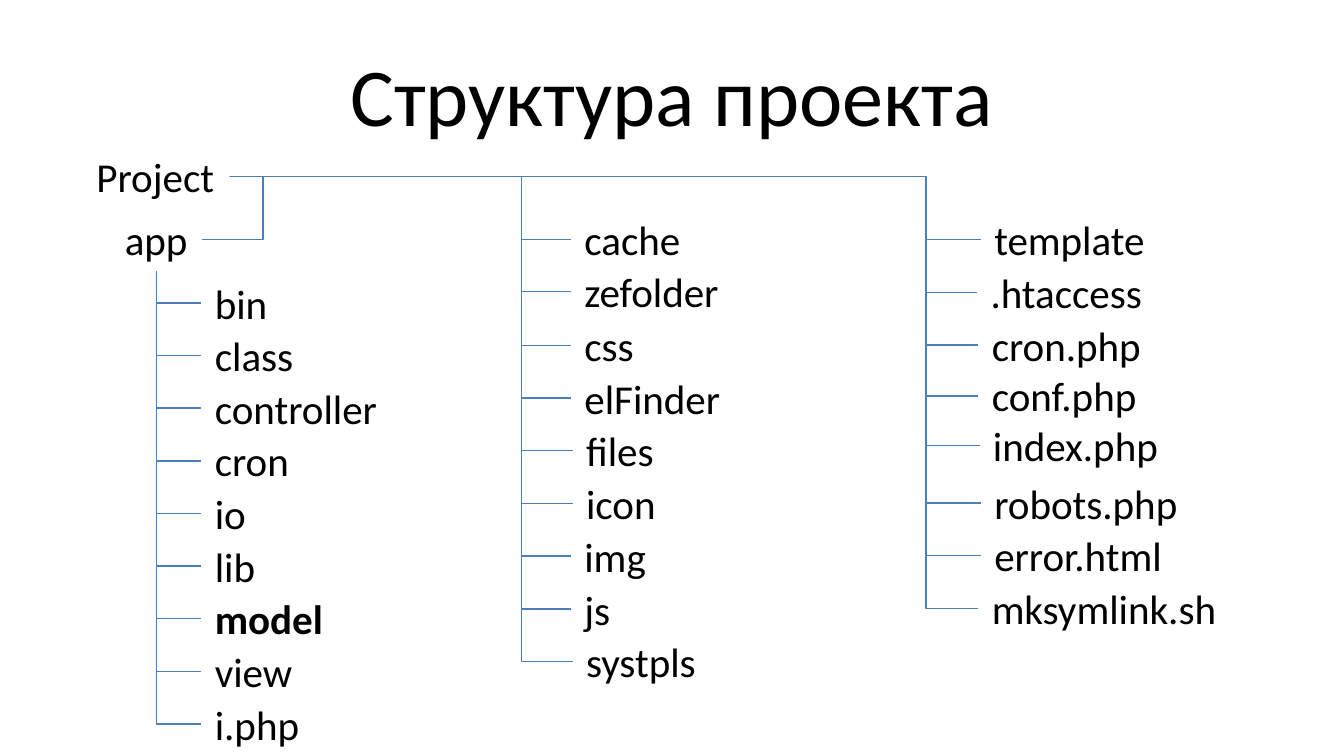
from dataclasses import dataclass
from typing import Optional

from lxml.etree import SubElement
from pptx import Presentation
from pptx.dml.color import RGBColor
from pptx.enum.shapes import MSO_CONNECTOR as Cxn
from pptx.enum.text import MSO_ANCHOR as Anchor, MSO_AUTO_SIZE as AutoSize, PP_ALIGN as Align
from pptx.oxml.ns import qn
from pptx.util import Pt

TOP, LEFT, BOTTOM, RIGHT = range(4)


@dataclass(frozen=True)
class Theme:
    font: str = "Calibri"
    text: RGBColor = RGBColor(0, 0, 0)
    line: RGBColor = RGBColor(0x4B, 0x7E, 0xBC)
    title_size: float = 44
    node_size: float = 22
    line_width: float = 0.75
    node_height: float = 33.8


@dataclass(frozen=True)
class Node:
    name: str
    width: float
    dx: float = 0
    dy: float = 0
    bold: bool = False


@dataclass(frozen=True)
class Column:
    x: float
    y: float
    pitch: float
    nodes: tuple[Node, ...]
    trunk: Optional[float] = None


THEME = Theme()
ROOT = Node("Project", 78.5)
APP = Node("app", 48.2)

APP_FILES = Column(108, 145.4, 28.2, (
    Node("bin", 43.9), Node("class", 56.9), Node("controller", 102.2),
    Node("cron", 55.4), Node("io", 31.7), Node("lib", 36),
    Node("model", 73.4, bold=True), Node("view", 58.3), Node("i.php", 59.8),
))
ROOT_COLUMNS = (
    Column(306, 111.6, 28.25, (
        Node("cache", 66.2), Node("zefolder", 87.8, dy=-0.7), Node("css", 41),
        Node("elFinder", 87.8), Node("files", 51.1, dx=0.9),
        Node("icon", 51.8, dx=0.9), Node("img", 47.5), Node("js", 28.8),
        Node("systpls", 74.2, dx=0.9),
    ), 279.5),
    Column(525.6, 111.6, 28.2, (
        Node("template", 95.8), Node(".htaccess", 96.5, dx=-2),
        Node("cron.php", 97.2, dx=-1.4), Node("conf.php", 92.9, dx=-1.4, dy=-1),
        Node("index.php", 103.7, dx=-0.7, dy=-2.6), Node("robots.php", 113.8),
        Node("error.html", 105.1), Node("mksymlink.sh", 136.1, dx=-1.4),
    ), 496),
)


def write(sp, text: str, size: float, bold: bool, align) -> None:
    tf = sp.text_frame
    tf.text = text
    p = tf.paragraphs[0]
    p.alignment = align
    font = p.runs[0].font
    font.color.rgb = THEME.text
    for key, value in {"name": THEME.font, "size": Pt(size), "bold": bold}.items():
        setattr(font, key, value)


def add_node(s, node: Node, x: float, y: float):
    sp = s.shapes.add_textbox(Pt(x + node.dx), Pt(y + node.dy),
                              Pt(node.width), Pt(THEME.node_height))
    write(sp, node.name, THEME.node_size, node.bold, Align.LEFT)
    for key, value in {"word_wrap": False, "auto_size": AutoSize.SHAPE_TO_FIT_TEXT}.items():
        setattr(sp.text_frame, key, value)
    return sp


def add_elbow(s, parent, parent_side: int, child, child_side: int):
    cx = s.shapes.add_connector(Cxn.ELBOW, 0, 0, 0, 0)
    cx.begin_connect(parent, parent_side)
    cx.end_connect(child, child_side)
    cx.line.color.rgb = THEME.line
    cx.line.width = Pt(THEME.line_width)
    SubElement(cx._element.spPr, qn("a:effectLst"))
    return cx


def bend_at(cx, trunk: float) -> None:
    share = (Pt(trunk) - cx.begin_x) / (cx.end_x - cx.begin_x)
    guides = cx._element.spPr.find(qn("a:prstGeom")).get_or_add_avLst()
    SubElement(guides, qn("a:gd"), name="adj1", fmla=f"val {round(share * 100000)}")


def bend_down_then_right(cx) -> None:
    x, y, w, h = cx.left, cx.top, cx.width, cx.height
    turned = {"left": x + (w - h) // 2, "top": y + (h - w) // 2, "width": h, "height": w}
    for key, value in turned.items():
        setattr(cx, key, value)
    sp_pr = cx._element.spPr
    sp_pr.find(qn("a:prstGeom")).set("prst", "bentConnector2")
    for key, value in {"rot": "16200000", "flipH": "1"}.items():
        sp_pr.find(qn("a:xfrm")).set(key, value)


def add_column(s, column: Column, parent, parent_side: int) -> None:
    for row, node in enumerate(column.nodes):
        sp = add_node(s, node, column.x, column.y + row * column.pitch)
        cx = add_elbow(s, parent, parent_side, sp, LEFT)
        if column.trunk is None:
            bend_down_then_right(cx)
        else:
            bend_at(cx, column.trunk)


def add_title(s, text: str) -> None:
    sp = s.shapes.title
    for key, value in {"left": 36, "top": 16.5, "width": 648, "height": 67.7}.items():
        setattr(sp, key, Pt(value))
    write(sp, text, THEME.title_size, False, Align.CENTER)
    sp.text_frame.vertical_anchor = Anchor.MIDDLE


def main() -> None:
    prs = Presentation()
    prs.slide_width, prs.slide_height = Pt(720), Pt(405)
    s = prs.slides.add_slide(prs.slide_layouts[5])
    add_title(s, "Структура проекта")
    root = add_node(s, ROOT, 44.6, 77.8)
    app = add_node(s, APP, 59.8, 111.6)
    bend_at(add_elbow(s, root, RIGHT, app, RIGHT), 141)
    add_column(s, APP_FILES, app, BOTTOM)
    for column in ROOT_COLUMNS:
        add_column(s, column, root, RIGHT)
    prs.save("out.pptx")


if __name__ == "__main__":
    main()
